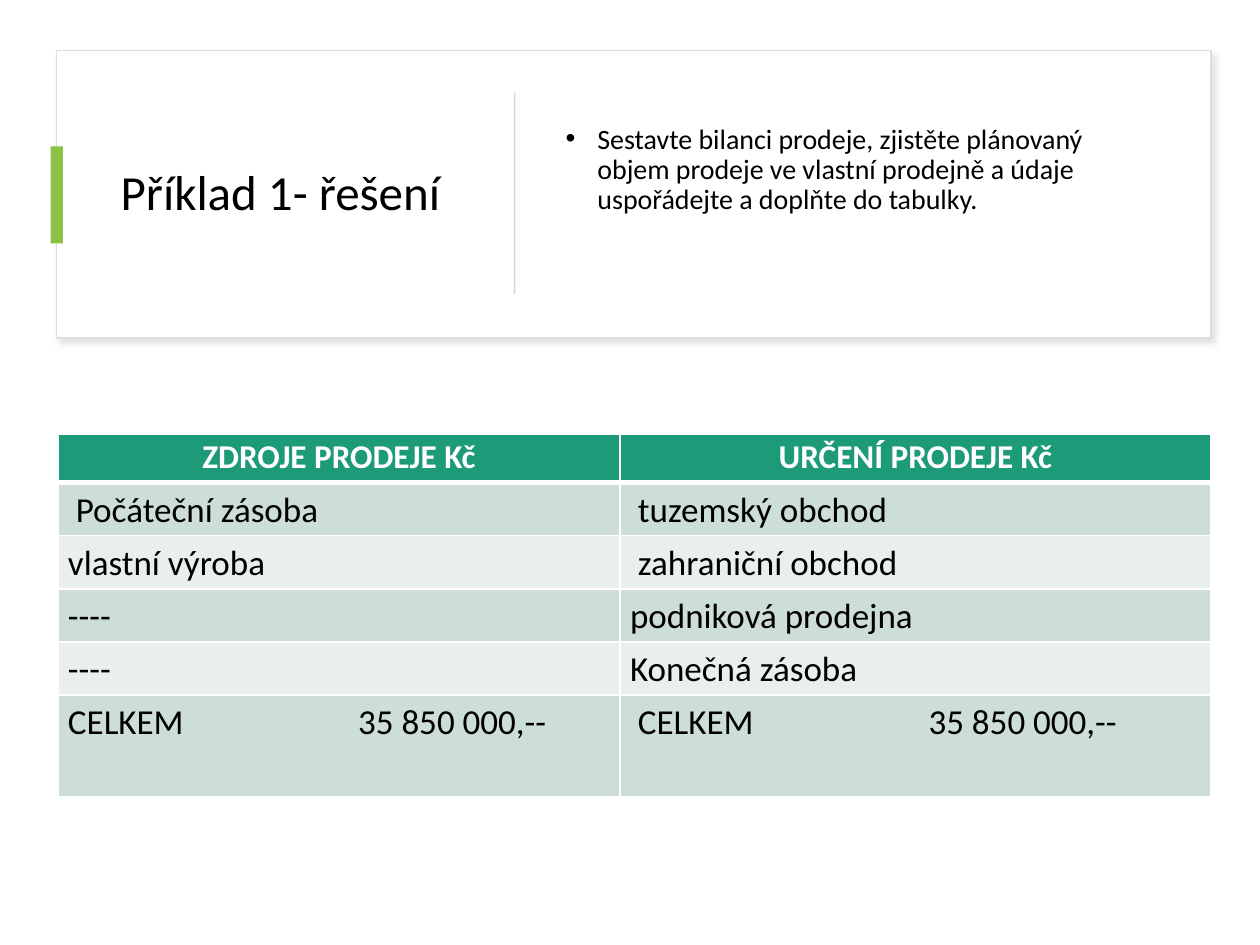
import pptx
import pptx.util
import pptx.dml.color
import pptx.enum.shapes
import pptx.enum.text
import pptx.oxml
import pptx.oxml.ns
import lxml.etree

Cm, Pt = pptx.util.Cm, pptx.util.Pt
ALIGN = pptx.enum.text.PP_ALIGN

TITLE = "Příklad 1- řešení"
TASK = ("Sestavte bilanci prodeje, zjistěte plánovaný objem prodeje "
        "ve vlastní prodejně a údaje uspořádejte a doplňte do tabulky.")
ROWS = [
    ("ZDROJE PRODEJE Kč", "URČENÍ PRODEJE Kč"),
    (" Počáteční zásoba", " tuzemský obchod"),
    ("vlastní výroba", " zahraniční obchod"),
    ("----", "podniková prodejna"),
    ("----", "Konečná zásoba"),
    ("CELKEM\t35 850 000,--", " CELKEM\t35 850 000,--"),
]
COLS = [11.33, 11.91]
TABS = [5.85, 6.02]
HEIGHTS = [0.97] + [1.07] * 4 + [2.06]
FONT = "Calibri"
HUES = {
    "white": "FFFFFF", "black": "000000", "frame": "DEDEDE", "shade": "C5C3C3",
    "accent": "8BC145", "rule": "D5D5D5", "head": "1D9A78",
    "odd": "CDDED6", "even": "E8EFEC",
}


def rgb(hue):
    return pptx.dml.color.RGBColor.from_string(HUES[hue])


def add_node(parent, tag, **attrs):
    return lxml.etree.SubElement(parent, pptx.oxml.ns.qn(tag), attrs)


def place(shape, left, top, width, height):
    shape.left, shape.top = Cm(left), Cm(top)
    shape.width, shape.height = Cm(width), Cm(height)


def add_box(slide, hue, *area):
    box = slide.shapes.add_shape(pptx.enum.shapes.MSO_SHAPE.RECTANGLE,
                                 *map(Cm, area))
    box.shadow.inherit = False
    box.fill.solid()
    box.fill.fore_color.rgb = rgb(hue)
    box.line.fill.background()
    return box


def style(para, size, hue="black", bold=False, align=ALIGN.LEFT, lead=0.9):
    para.alignment, para.line_spacing = align, lead
    font = para.font
    font.name, font.size, font.bold = FONT, Pt(size), bold
    font.color.rgb = rgb(hue)


def fill_holder(holder, text, size, *area):
    place(holder, *area)
    frame = holder.text_frame
    frame.text = text
    frame.word_wrap = True
    frame.auto_size = pptx.enum.text.MSO_AUTO_SIZE.NONE
    frame.vertical_anchor = pptx.enum.text.MSO_ANCHOR.MIDDLE
    style(frame.paragraphs[0], size)
    return frame


def add_card(slide):
    """Framed panel with a soft shadow, set behind the title."""
    card = add_box(slide, "white", 1.14, 1.02, 23.27, 5.79)
    card.line.color.rgb = rgb("frame")
    card.line.width = Pt(1)
    effects = card._element.spPr.find(pptx.oxml.ns.qn("a:effectLst"))
    shade = add_node(effects, "a:outerShdw", blurRad=str(Pt(4)),
                     dist=str(Pt(3)), dir="2700000", algn="tl", rotWithShape="0")
    color = add_node(shade, "a:srgbClr", val=HUES["shade"])
    add_node(color, "a:alpha", val="50000")
    slide.shapes.title._element.addprevious(card._element)


def edge(cell, row):
    """White borders, thick between the header and the first row."""
    props = cell._tc.get_or_add_tcPr()
    thick = {0: "B", 1: "T"}.get(row)
    for side in "LRTB":
        line = add_node(props, "a:ln" + side, w=str(Pt(3 if side == thick else 1)))
        add_node(add_node(line, "a:solidFill"), "a:srgbClr", val=HUES["white"])


def fill_cell(cell, text, row, tab):
    head = row == 0
    edge(cell, row)
    cell.fill.solid()
    cell.fill.fore_color.rgb = rgb("head" if head else "odd" if row % 2 else "even")
    cell.margin_left = cell.margin_right = Cm(0.2)
    cell.margin_top = cell.margin_bottom = 0
    cell.text = text
    para = cell.text_frame.paragraphs[0]
    if "\t" in text:
        stops = add_node(para._p.get_or_add_pPr(), "a:tabLst")
        add_node(stops, "a:tab", pos=str(Cm(tab)), algn="l")
    if head:
        style(para, 19, "white", True, ALIGN.CENTER, 1.07)
    else:
        style(para, 20, lead=1.15)
        para.space_after = Pt(10)


def add_grid(slide):
    grid = slide.shapes.add_table(
        len(ROWS), len(COLS), Cm(1.17), Cm(8.76),
        Cm(sum(COLS)), Cm(sum(HEIGHTS))).table
    for col, width in zip(grid.columns, COLS):
        col.width = Cm(width)
    for r, (texts, height) in enumerate(zip(ROWS, HEIGHTS)):
        grid.rows[r].height = Cm(height)
        for c, text in enumerate(texts):
            fill_cell(grid.cell(r, c), text, r, TABS[c])


def main():
    deck = pptx.Presentation()
    deck.slide_width, deck.slide_height = Cm(25.4), Cm(19.05)
    slide = deck.slides.add_slide(deck.slide_layouts[1])
    add_card(slide)
    fill_holder(slide.shapes.title, TITLE, 28, 2.18, 1.63, 7.42, 4.57)
    add_box(slide, "accent", 1.02, 2.95, 0.25, 1.96)
    add_box(slide, "rule", 10.36, 1.87, 0.03, 4.06)

    body = fill_holder(slide.placeholders[1], TASK, 16, 11.15, 1.63, 12.5, 4.57)
    body.margin_bottom = Cm(1.09)
    para = body.paragraphs[0]
    para.space_before = Pt(10)
    props = para._p.get_or_add_pPr()
    props.set("marL", str(Cm(0.64)))
    props.set("indent", str(-Cm(0.64)))

    add_grid(slide)
    deck.save("out.pptx")


if __name__ == "__main__":
    main()
